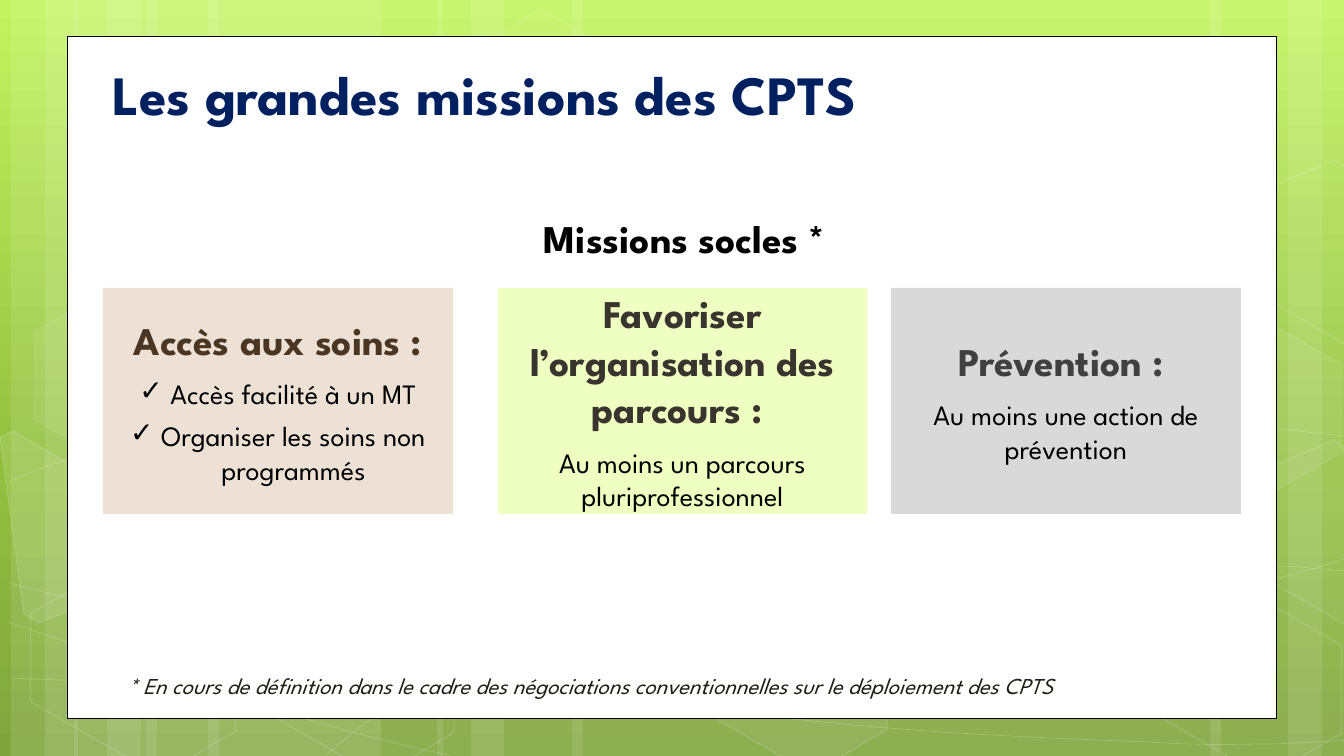
from copy import deepcopy
from pptx import Presentation
from pptx.dml.color import RGBColor
from pptx.enum.shapes import MSO_SHAPE
from pptx.enum.text import MSO_ANCHOR, MSO_AUTO_SIZE, PP_ALIGN
from pptx.oxml.ns import qn
from pptx.util import Pt

RECT, HEXA = MSO_SHAPE.RECTANGLE, MSO_SHAPE.HEXAGON
TOP, MID, LOW = MSO_ANCHOR.TOP, MSO_ANCHOR.MIDDLE, MSO_ANCHOR.BOTTOM
LEFT, MIDDLE = PP_ALIGN.LEFT, PP_ALIGN.CENTER
FONT = "League Spartan"
EMU = 914400 / 100.8
WIDE, HIGH = 1344, 756
WHITE, BLACK = "FFFFFF", "000000"

TITLE = "Les grandes missions des CPTS"
LABEL = "Missions socles *"
NOTE = ("* En cours de définition dans le cadre des négociations "
        "conventionnelles sur le déploiement des CPTS")

# left, width, fill, heading colour, heading, lines, ticked
CARDS = [
    (103, 350, "EDE1D6", "4A3622", "Accès aux soins :",
     ["Accès facilité à un MT", "Organiser les soins non programmés"], True),
    (498, 369, "EFFFC1", "39342D", "Favoriser l’organisation des parcours : ",
     ["Au moins un parcours pluriprofessionnel"], False),
    (891, 350, "D9D9D9", "404040", "Prévention : ",
     ["Au moins une action de prévention"], False),
]
CARD_TOP, CARD_HIGH = 288, 226

SKY = [(0, "C3F35F"), (0.62, "93BF3F"), (1, "81A53E")]

# left, width of the full-height stripes
STRIPES = [(146, 235), (11, 67), (45, 112), (208, 235), (74, 67), (107, 112),
           (986, 235), (1288, 67), (1210, 112), (572, 414), (437, 67), (471, 112)]

# start, then three points for each Bezier segment
CURVES = [
    [(10, 678), (83, 681), (155, 684), (256, 683), (357, 682), (481, 680), (615, 670),
     (750, 660), (940, 641), (1063, 622), (1187, 603), (1313, 572), (1354, 555)],
    [(10, 481), (48, 465), (87, 450), (163, 434), (240, 419), (348, 397), (467, 390),
     (587, 383), (735, 382), (879, 390), (1027, 398), (1273, 429), (1354, 437)],
    [(8, 622), (170, 677), (333, 733), (450, 755)],
    [(10, 583), (51, 594), (94, 605), (172, 621), (250, 636), (367, 661), (479, 678),
     (591, 696), (733, 714), (844, 724), (956, 735), (1075, 739), (1146, 742),
     (1217, 746), (1235, 744), (1270, 744), (1304, 743), (1330, 741), (1354, 740)],
    [(326, 755), (350, 735), (373, 715), (406, 697), (438, 678), (484, 658), (521, 644),
     (558, 631), (582, 624), (631, 614), (681, 604), (771, 590), (817, 583),
     (865, 576), (872, 576), (914, 574), (955, 571), (1021, 567), (1067, 566),
     (1114, 565), (1191, 566), (1191, 566), (1220, 566), (1250, 566), (1280, 566),
     (1305, 567), (1328, 570), (1352, 571)],
]

# left, top, fill opacity, line opacity
HEXES = [(449, 36, 4, 8), (667, 594, 6, 12), (15, 596, 0, 12), (19, 314, 7, 8),
         (234, 597, 0, 12), (1121, 598, 0, 12), (1121, 317, 7, 8)]

# points, fill opacity
SHARDS = [
    ([(0, 437), (13, 431), (116, 491), (128, 586), (39, 623), (24, 614)], 10),
    ([(1245, 478), (1334, 440), (1343, 447), (1368, 630), (1360, 633), (1257, 574)], 4),
    ([(1245, 198), (1334, 160), (1345, 166), (1368, 349), (1360, 353), (1257, 293)], 0),
]


def px(n):
    return round(n * EMU)


def tint(code):
    return RGBColor.from_string(code)


def fade(shape, alpha):
    """Set the opacity, in percent, of the colour set last."""
    node = list(shape._element.spPr.iter(qn("a:srgbClr")))[-1]
    mark = node.makeelement(qn("a:alpha"), {"val": str(alpha * 1000)})
    node.append(mark)


def paint(shape, fill=None, line=None, width=1, clear=100, thin=100):
    """Fill and outline a shape; clear and thin are opacities in percent."""
    shape.shadow.inherit = False
    if fill and clear:
        shape.fill.solid()
        shape.fill.fore_color.rgb = tint(fill)
        if clear < 100:
            fade(shape, clear)
    else:
        shape.fill.background()
    if line:
        shape.line.width = Pt(width)
        shape.line.color.rgb = tint(line)
        if thin < 100:
            fade(shape, thin)
    else:
        shape.line.fill.background()


def block(kind, x, y, w, h):
    return slide.shapes.add_shape(kind, px(x), px(y), px(w), px(h))


def trace(points, close):
    dots = [(px(x), px(y)) for x, y in points]
    path = slide.shapes.build_freeform(*dots[0], scale=1.0)
    path.add_line_segments(dots[1:], close=close)
    return path.convert_to_shape()


def bend(shape):
    """Turn each three straight steps of an outline into one Bezier segment."""
    legs = list(shape._element.spPr.iter(qn("a:lnTo")))
    for i in range(0, len(legs), 3):
        arc = legs[i].makeelement(qn("a:cubicBezTo"), {})
        legs[i].addprevious(arc)
        for leg in legs[i:i + 3]:
            arc.append(leg[0])
            leg.getparent().remove(leg)
    return shape


def setup(shape, anchor):
    frame = shape.text_frame
    frame.word_wrap = True
    frame.auto_size = MSO_AUTO_SIZE.NONE
    frame.vertical_anchor = anchor
    return frame


def write(para, text, size, color, align, bold=False, slant=False, gap=0):
    para.alignment = align
    para.space_before = Pt(gap)
    run = para.add_run()
    run.text = text
    font = run.font
    font.name, font.size, font.bold, font.italic = FONT, Pt(size), bold, slant
    font.color.rgb = tint(color)


def tick(para):
    props = para._p.get_or_add_pPr()
    props.set("marL", str(px(31)))
    props.set("indent", str(-px(31)))
    props.append(props.makeelement(qn("a:buFont"), {"typeface": FONT}))
    props.append(props.makeelement(qn("a:buChar"), {"char": "✓"}))


def label(x, y, w, h, anchor, *args, **style):
    box = slide.shapes.add_textbox(px(x), px(y), px(w), px(h))
    write(setup(box, anchor).paragraphs[0], *args, **style)


deck = Presentation()
deck.slide_width, deck.slide_height = px(WIDE), px(HIGH)
slide = deck.slides.add_slide(deck.slide_layouts[5])

back = slide.background.fill
back.gradient()
back.gradient_angle = 270
stops = next(slide._element.iter(qn("a:gsLst")))
stops.append(deepcopy(stops[-1]))
for stop, (place, code) in zip(back.gradient_stops, SKY):
    stop.position = place
    stop.color.rgb = tint(code)

for x, w in STRIPES:
    paint(block(RECT, x, 0, w, HIGH), WHITE, clear=10)
for curve in CURVES:
    paint(bend(trace(curve, False)), line=WHITE, width=0.5, thin=20)
for x, y, clear, thin in HEXES:
    hexa = block(HEXA, x, y, 236, 153)
    hexa.adjustments[0] = 0.285
    hexa.rotation = 30
    paint(hexa, WHITE, WHITE, clear=clear, thin=thin)
for points, clear in SHARDS:
    paint(trace(points, True), WHITE, WHITE, clear=clear, thin=12)
paint(block(RECT, 67, 36, 1209, 682), WHITE, BLACK, 0.5)

title = slide.shapes.title
slide.shapes._spTree.append(title._element)
title.left, title.top, title.width, title.height = map(px, (102, 68, 983, 64))
para = setup(title, TOP).paragraphs[0]
write(para, TITLE, 39.6, "002060", LEFT, bold=True)
para.line_spacing = 0.79

label(79, 209, 1211, 58, TOP, LABEL, 28, BLACK, MIDDLE, bold=True)
label(118, 646, 1068, 58, LOW, NOTE, 16.2, "1F1E16", LEFT, slant=True)

for x, w, fill, color, head, lines, ticked in CARDS:
    card = block(RECT, x, CARD_TOP, w, CARD_HIGH)
    paint(card, fill)
    frame = setup(card, MID)
    write(frame.paragraphs[0], head, 28, color, MIDDLE, bold=True)
    for i, line in enumerate(lines):
        para = frame.add_paragraph()
        write(para, line, 20, BLACK, MIDDLE, gap=6 if i else 10)
        if ticked:
            tick(para)

deck.save("out.pptx")
